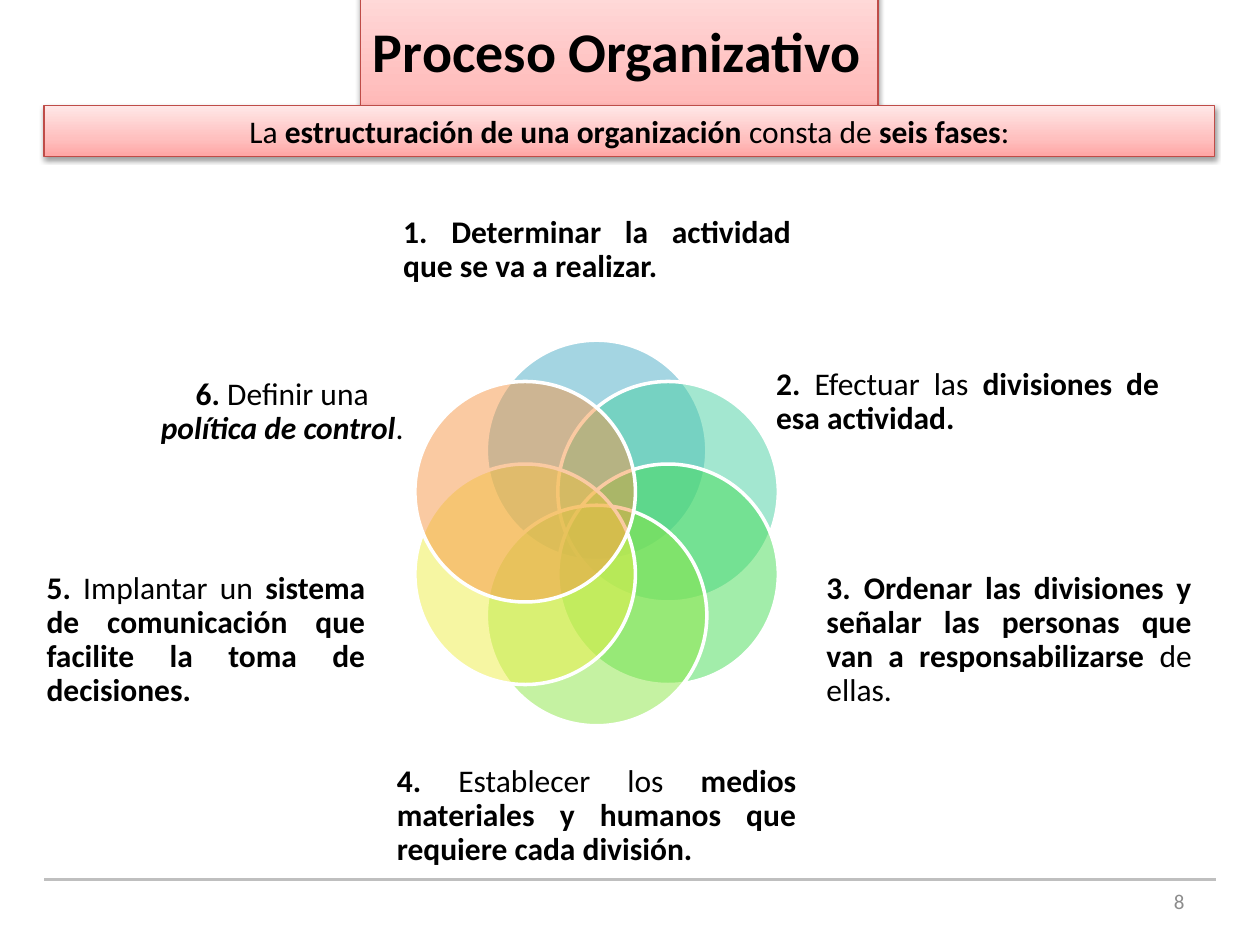
from math import cos, radians, sin

from lxml.etree import SubElement
from pptx import Presentation
from pptx.dml.color import RGBColor
from pptx.enum.shapes import MSO_CONNECTOR as Connector, MSO_SHAPE as Shape
from pptx.enum.text import MSO_ANCHOR as Anchor, MSO_AUTO_SIZE as AutoSize, PP_ALIGN as Align
from pptx.oxml import parse_xml
from pptx.oxml.ns import nsdecls, qn
from pptx.util import Inches, Pt

COLORS = {
    "text": "000000", "number": "8C8C8C", "rule": "BFBFBF", "ring": "FFFFFF",
    "border": "BF4C48", "deep": "FFA6A5", "middle": "FFC0BF", "pale": "FFE7E7",
    "shadow": "000000",
}
FONT = "Calibri"
PLAIN, BOLD, BOLD_ITALIC = (False, False), (True, False), (True, True)

# Each phase: circle colour, text place, alignment, spans
PHASES = [
    ("4BACC6", (3.2, 1.39, 3.08, 1.19), Align.JUSTIFY,
     [("1. Determinar la actividad que se va a realizar.", BOLD)]),
    ("49D1A3", (6.16, 2.54, 3.04, 1.31), Align.JUSTIFY,
     [("2. ", BOLD), ("Efectuar las ", PLAIN), ("divisiones de esa actividad.", BOLD)]),
    ("47DC57", (6.56, 4.35, 2.9, 1.46), Align.JUSTIFY,
     [("3. Ordenar las divisiones y señalar las personas que van a responsabilizarse", BOLD),
      (" de ellas.", PLAIN)]),
    ("8DE646", (3.15, 5.88, 3.17, 1.19), Align.JUSTIFY,
     [("4. ", BOLD), ("Establecer los ", PLAIN),
      ("medios materiales y humanos que requiere cada división.", BOLD)]),
    ("EEEF46", (0.37, 4.35, 2.53, 1.46), Align.JUSTIFY,
     [("5. ", BOLD), ("Implantar un", PLAIN),
      (" sistema de comunicación que facilite la toma de decisiones.", BOLD)]),
    ("F79646", (1.2, 2.54, 2.08, 1.46), Align.CENTER,
     [("6. ", BOLD), ("Definir una ", PLAIN), ("política de control", BOLD_ITALIC), (".", PLAIN)]),
]
CENTER_X, CENTER_Y, ORBIT, DIAMETER = 4.735, 4.23, 0.655, 1.75


def rgb(value):
    return RGBColor.from_string(value)


def inches(*lengths):
    return [Inches(length) for length in lengths]


def write(shape, spans, size, align, color=COLORS["text"]):
    para = shape.text_frame.paragraphs[0]
    para.alignment = align
    para.font.name, para.font.size = FONT, Pt(size)
    para.font.color.rgb = rgb(color)
    for text, (bold, italic) in spans:
        span = para.add_run()
        span.text = text
        span.font.bold, span.font.italic = bold, italic
    return para


def style_banner(shape):
    """Give a shape the pink gradient, red border and soft shadow."""
    shape.fill.background()
    props = shape.fill._xPr
    stops = "".join(
        f'<a:gs pos="{position * 1000}"><a:srgbClr val="{COLORS[name]}"/></a:gs>'
        for position, name in ((0, "deep"), (35, "middle"), (100, "pale")))
    gradient = parse_xml(
        f'<a:gradFill {nsdecls("a")} rotWithShape="1"><a:gsLst>{stops}</a:gsLst>'
        '<a:lin ang="16200000" scaled="1"/></a:gradFill>')
    props.replace(props.find(qn("a:noFill")), gradient)
    shape.line.color.rgb = rgb(COLORS["border"])
    shape.line.width = Pt(0.75)
    shape.shadow.inherit = False
    effects = props.find(qn("a:effectLst"))
    effects.append(parse_xml(
        f'<a:outerShdw {nsdecls("a")} blurRad="{Pt(3.1)}" dist="{Pt(1.6)}" dir="5400000" '
        f'rotWithShape="0"><a:srgbClr val="{COLORS["shadow"]}"><a:alpha val="38000"/>'
        '</a:srgbClr></a:outerShdw>'))


def add_title(page):
    title = page.shapes.title
    title.left, title.top, title.width, title.height = inches(2.86, 0.08, 4.11, 0.64)
    style_banner(title)
    title.text_frame.word_wrap = False
    title.text_frame.auto_size = AutoSize.SHAPE_TO_FIT_TEXT
    write(title, [("Proceso Organizativo", BOLD)], 32, Align.JUSTIFY)


def add_subtitle(page):
    bar = page.shapes.add_shape(Shape.RECTANGLE, *inches(0.35, 0.84, 9.29, 0.4))
    style_banner(bar)
    bar.text_frame.auto_size = AutoSize.SHAPE_TO_FIT_TEXT
    write(bar, [("La ", PLAIN), ("estructuración de una organización ", BOLD),
                ("consta de ", PLAIN), ("seis fases", BOLD), (":", PLAIN)], 18, Align.CENTER)


def add_circle(page, index, color):
    angle = radians(60 * index)
    left = CENTER_X + ORBIT * sin(angle) - DIAMETER / 2
    top = CENTER_Y - ORBIT * cos(angle) - DIAMETER / 2
    circle = page.shapes.add_shape(Shape.OVAL, *inches(left, top, DIAMETER, DIAMETER))
    circle.shadow.inherit = False
    circle.fill.solid()
    circle.fill.fore_color.rgb = rgb(color)
    tint = circle.fill._xPr.find(qn("a:solidFill"))[0]
    SubElement(tint, qn("a:alpha"), val="50000")
    circle.line.color.rgb = rgb(COLORS["ring"])
    circle.line.width = Pt(2)


def add_text(page, place):
    box = page.shapes.add_textbox(*inches(*place))
    box.text_frame.word_wrap = True
    box.text_frame.vertical_anchor = Anchor.MIDDLE
    return box


def add_phase_text(page, place, align, spans):
    box = add_text(page, place)
    frame = box.text_frame
    frame.margin_left = frame.margin_right = frame.margin_top = frame.margin_bottom = 0
    write(box, spans, 18, align).line_spacing = 0.9


def add_footer(page):
    rule = page.shapes.add_connector(Connector.STRAIGHT, *inches(0.35, 6.98, 9.65, 6.98))
    rule.line.color.rgb = rgb(COLORS["rule"])
    rule.line.width = Pt(2)
    SubElement(rule._element.spPr, qn("a:effectLst"))
    number = add_text(page, (7.17, 6.95, 2.33, 0.4))
    write(number, [("8", PLAIN)], 12, Align.RIGHT, COLORS["number"])


def main():
    deck = Presentation()
    deck.slide_width, deck.slide_height = inches(10, 7.5)
    page = deck.slides.add_slide(deck.slide_layouts.get_by_name("Title Only"))
    add_footer(page)
    add_subtitle(page)
    for index, (color, place, align, spans) in enumerate(PHASES):
        add_circle(page, index, color)
        add_phase_text(page, place, align, spans)
    add_title(page)
    deck.save("out.pptx")


if __name__ == "__main__":
    main()
